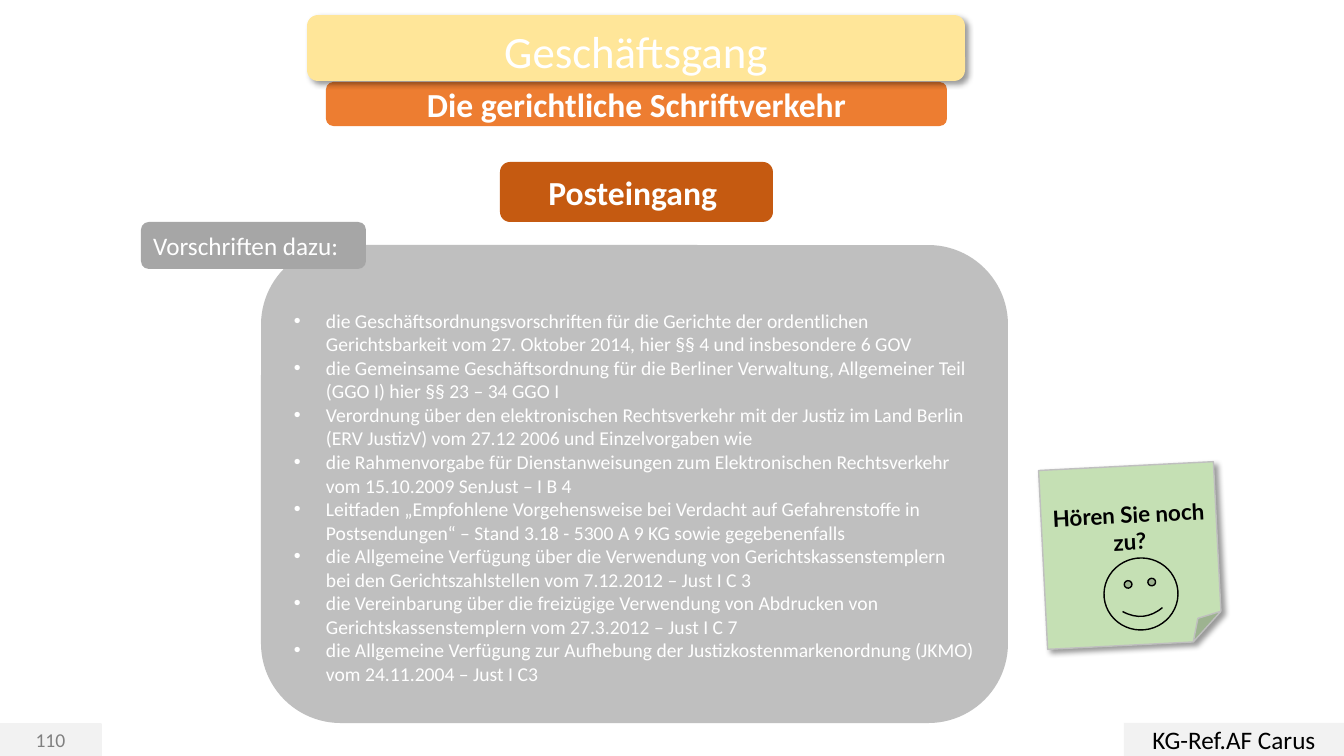
"""Build the slide on the rules for incoming court mail."""
from lxml.etree import SubElement
from pptx import Presentation
from pptx.dml.color import RGBColor
from pptx.enum.shapes import MSO_SHAPE
from pptx.enum.text import MSO_ANCHOR, MSO_AUTO_SIZE, PP_ALIGN
from pptx.oxml.ns import qn
from pptx.util import Pt

HEADING = "Geschäftsgang"
RULES = [
    "die Geschäftsordnungsvorschriften für die Gerichte der ordentlichen Gerichtsbarkeit vom 27. Oktober 2014, hier §§ 4 und insbesondere 6 GOV",
    "die Gemeinsame Geschäftsordnung für die Berliner Verwaltung, Allgemeiner Teil (GGO I) hier §§ 23 – 34 GGO I",
    "Verordnung über den elektronischen Rechtsverkehr mit der Justiz im Land Berlin (ERV JustizV) vom 27.12 2006 und Einzelvorgaben wie",
    "die Rahmenvorgabe für Dienstanweisungen zum Elektronischen Rechtsverkehr vom 15.10.2009 SenJust – I B 4",
    "Leitfaden „Empfohlene Vorgehensweise bei Verdacht auf Gefahrenstoffe in Postsendungen“ – Stand 3.18 - 5300 A 9 KG sowie gegebenenfalls",
    "die Allgemeine Verfügung über die Verwendung von Gerichtskassenstemplern bei den Gerichtszahlstellen vom 7.12.2012 – Just I C 3",
    "die Vereinbarung über die freizügige Verwendung von Abdrucken von Gerichtskassenstemplern vom 27.3.2012 – Just I C 7",
    "die Allgemeine Verfügung zur Aufhebung der Justizkostenmarkenordnung (JKMO) vom 24.11.2004 – Just I C3",
]
COLOURS = {
    "white": "FFFFFF", "black": "000000", "panel": "BFBFBF", "label": "A6A6A6",
    "footer": "F2F2F2", "number": "808080", "orange": "ED7D31",
    "rust": "C55A11", "yellow": "FFE699", "green": "C5E0B4",
}
ROUND, RECT = MSO_SHAPE.ROUNDED_RECTANGLE, MSO_SHAPE.RECTANGLE
BOXES = [
    {"kind": ROUND, "at": (261, 245, 747, 478), "fill": "panel"},
    {"kind": RECT, "at": (0, 724, 101, 32), "fill": "footer", "line": "footer",
     "text": "110", "size": 14, "colour": "number"},
    {"kind": RECT, "at": (1124, 723, 220, 33), "fill": "footer",
     "text": "KG-Ref.AF Carus", "size": 18, "colour": "black"},
    {"kind": ROUND, "at": (326, 82, 621, 44), "fill": "orange",
     "text": "Die gerichtliche Schriftverkehr", "size": 24, "bold": True},
    {"kind": ROUND, "at": (307, 15, 658, 66), "fill": "yellow", "shadow": True},
    {"kind": ROUND, "at": (141, 222, 225, 47), "fill": "label",
     "text": "Vorschriften dazu:", "size": 18, "align": PP_ALIGN.LEFT},
    {"kind": ROUND, "at": (500, 162, 273, 60), "fill": "rust",
     "text": "Posteingang ", "size": 24, "bold": True},
    {"kind": MSO_SHAPE.FOLDED_CORNER, "at": (1043, 466, 175, 179), "fill": "green",
     "line": "panel", "shadow": True, "rotation": 357.1, "text": "Hören Sie noch zu?",
     "size": 16, "bold": True, "colour": "black", "font": "Lato", "bottom": 31},
    {"kind": MSO_SHAPE.SMILEY_FACE, "at": (1104, 558, 74, 72), "fill": "green",
     "line": "black", "rotation": 354.3},
]
HEADING_AT = (307, 15, 658, 72)
RULES_AT = (294, 309, 681, 376)
INDENT = 32
SLIDE_SIZE = (1344, 756)
EMU_PER_PX = 12192000 / 1344


def px(length):
    return round(length * EMU_PER_PX)


def rgb(name):
    return RGBColor.from_string(COLOURS[name])


def assign(target, values):
    for name, value in values.items():
        setattr(target, name, value)


def place(part, at):
    assign(part, dict(zip(("left", "top", "width", "height"), map(px, at))))


def write(frame, lines, size, colour="white", bold=False, font="Calibri",
          align=PP_ALIGN.CENTER, frame_format=None):
    assign(frame, {"word_wrap": True, "auto_size": MSO_AUTO_SIZE.NONE,
                   "vertical_anchor": MSO_ANCHOR.MIDDLE, **(frame_format or {})})
    frame.text = "\n".join(lines)
    for paragraph in frame.paragraphs:
        assign(paragraph, {"alignment": align, "line_spacing": 1.0,
                           "space_before": Pt(0), "space_after": Pt(0)})
        for run in paragraph.runs:
            assign(run.font, {"name": font, "size": Pt(size), "bold": bold})
            run.font.color.rgb = rgb(colour)


def add_shadow(box):
    effects = box._element.spPr.find(qn("a:effectLst"))
    outer = SubElement(effects, qn("a:outerShdw"), blurRad=str(Pt(4)), dist=str(Pt(3)),
                       dir="2700000", algn="tl", rotWithShape="0")
    black = SubElement(outer, qn("a:srgbClr"), val=COLOURS["black"])
    SubElement(black, qn("a:alpha"), val="40000")


def add_box(slide, content):
    box = slide.shapes.add_shape(content["kind"], *map(px, content["at"]))
    box.rotation = content.get("rotation", 0)
    box.fill.solid()
    box.fill.fore_color.rgb = rgb(content["fill"])
    if "line" in content:
        box.line.color.rgb = rgb(content["line"])
        box.line.width = Pt(1)
    else:
        box.line.fill.background()
    box.shadow.inherit = False
    if content.get("shadow"):
        add_shadow(box)
    if "text" in content:
        options = {name: content[name] for name in ("size", "colour", "bold", "font", "align")
                   if name in content}
        write(box.text_frame, [content["text"]], **options,
              frame_format={"margin_bottom": px(content.get("bottom", 5))})


def add_bullets(frame):
    for paragraph in frame.paragraphs:
        properties = paragraph._p.get_or_add_pPr()
        assign_indent = {"marL": px(INDENT), "indent": -px(INDENT)}
        for name, value in assign_indent.items():
            properties.set(name, str(value))
        SubElement(properties, qn("a:buFont"), typeface="Arial")
        SubElement(properties, qn("a:buChar"), char="•")


def main():
    deck = Presentation()
    assign(deck, dict(zip(("slide_width", "slide_height"), map(px, SLIDE_SIZE))))
    slide = deck.slides.add_slide(deck.slide_layouts[1])
    for content in BOXES:
        add_box(slide, content)

    heading, rules = slide.shapes.title, slide.placeholders[1]
    for part, at in ((heading, HEADING_AT), (rules, RULES_AT)):
        place(part, at)
        slide.shapes._spTree.append(part._element)
    no_margins = dict.fromkeys(
        ("margin_left", "margin_top", "margin_right", "margin_bottom"), 0)
    write(heading.text_frame, [HEADING], 32, frame_format=no_margins)
    write(rules.text_frame, RULES, 14, align=PP_ALIGN.LEFT, frame_format=no_margins)
    add_bullets(rules.text_frame)
    deck.save("out.pptx")


if __name__ == "__main__":
    main()
